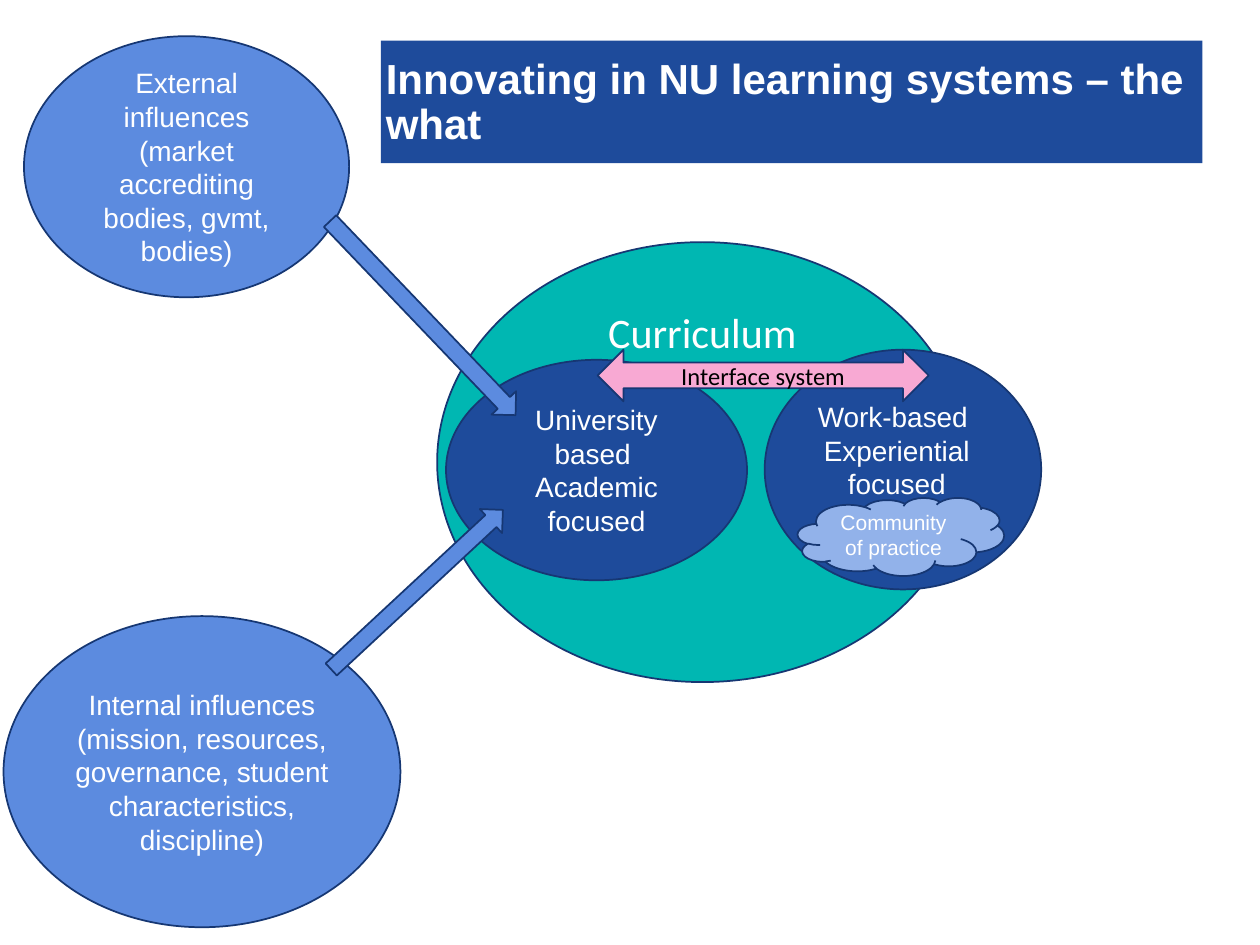
from lxml import etree
from pptx import Presentation
from pptx import util as u
from pptx.dml.color import RGBColor
from pptx.enum import shapes, text

WHITE = RGBColor(0xFF, 0xFF, 0xFF)
BLACK = RGBColor(0x00, 0x00, 0x00)
TEAL = RGBColor(0x00, 0xB7, 0xB2)
NAVY = RGBColor(0x1E, 0x4B, 0x9B)
BLUE = RGBColor(0x5C, 0x8B, 0xDF)
PALE_BLUE = RGBColor(0x92, 0xB2, 0xEA)
PINK = RGBColor(0xF8, 0xA9, 0xD3)
OUTLINE = RGBColor(0x16, 0x37, 0x73)

KIND = shapes.MSO_SHAPE
MIDDLE, TOP = text.MSO_ANCHOR.MIDDLE, text.MSO_ANCHOR.TOP
CENTER, LEFT = text.PP_ALIGN.CENTER, text.PP_ALIGN.LEFT


def add_box(page, kind, place, fill, line=OUTLINE, rotation=0):
    """Add a flat preset shape; place is left, top, width, height in points."""
    box = page.shapes.add_shape(kind, *(u.Pt(length) for length in place))
    box.shadow.inherit = False
    box.rotation = rotation
    box.fill.solid()
    box.fill.fore_color.rgb = fill
    if line is None:
        box.line.fill.background()
    else:
        box.line.color.rgb = line
        box.line.width = u.Pt(1)
    return box


def write(box, words, size=16, font="Arial", color=WHITE, bold=False,
          align=CENTER, anchor=MIDDLE, insets=(7.2, 3.6, 7.2, 3.6), spacing=None):
    """Write one paragraph per line of words; insets are left, top, right, bottom."""
    frame = box.text_frame
    frame.word_wrap = True
    frame.vertical_anchor = anchor
    (frame.margin_left, frame.margin_top,
     frame.margin_right, frame.margin_bottom) = (u.Pt(inset) for inset in insets)
    for index, line in enumerate(words.split("\n")):
        para = frame.add_paragraph() if index else frame.paragraphs[0]
        para.alignment = align
        if spacing:
            para.line_spacing = spacing
        span = para.add_run()
        span.text = line
        span.font.name = font
        span.font.size = u.Pt(size)
        span.font.bold = bold
        span.font.color.rgb = color


def main():
    deck = Presentation()
    deck.slide_width, deck.slide_height = u.Pt(720), u.Pt(540)
    page = deck.slides.add_slide(deck.slide_layouts[6])

    # Curriculum and its university side
    curriculum = add_box(page, KIND.OVAL, (249.8, 138.4, 303.1, 251.4), TEAL)
    write(curriculum, "Curriculum", size=24, font="Calibri", anchor=TOP,
          insets=(0, 0, 0, 0))
    university = add_box(page, KIND.OVAL, (254.9, 205.6, 172, 126), NAVY)
    write(university, "University based \nAcademic focused", insets=(7.2, 0, 7.2, 0))

    # Influences
    external = add_box(page, KIND.OVAL, (13.7, 20.7, 185.8, 149.2), BLUE)
    write(external, "External influences (market accrediting bodies, gvmt, bodies)")
    internal = add_box(page, KIND.OVAL, (2, 352.1, 226.8, 177.8), BLUE)
    write(internal, "Internal influences (mission, resources, governance, "
                    "student characteristics, discipline)")

    # Work side with its community
    work = add_box(page, KIND.OVAL, (437, 199.8, 158, 137), NAVY)
    write(work, "Work-based \nExperiential focused", anchor=TOP,
          insets=(0, 8.6, 7.2, 0))
    community = add_box(page, KIND.CLOUD, (455.8, 284.4, 118, 44.6), PALE_BLUE)
    write(community, "Community of practice", size=12)

    # Interface between the two sides
    interface = add_box(page, KIND.LEFT_RIGHT_ARROW, (341.5, 199.8, 189.2, 29.5), PINK)
    write(interface, "Interface system", size=14, font="Calibri", color=BLACK)

    # Arrows from the influences
    add_box(page, KIND.RIGHT_ARROW, (171.4, 327.6, 133.9, 18.7), BLUE, rotation=317.1)
    add_box(page, KIND.RIGHT_ARROW, (164.9, 172.1, 153.4, 19.4), BLUE, rotation=46.3)

    # Title
    title = add_box(page, KIND.RECTANGLE, (217.6, 23.2, 469.5, 70), NAVY, line=None)
    write(title, "Innovating in NU learning systems – the what", size=24, bold=True,
          align=LEFT, insets=(2.9, 1.4, 0, 0), spacing=0.9)

    deck.save("out.pptx")


if __name__ == "__main__":
    main()
